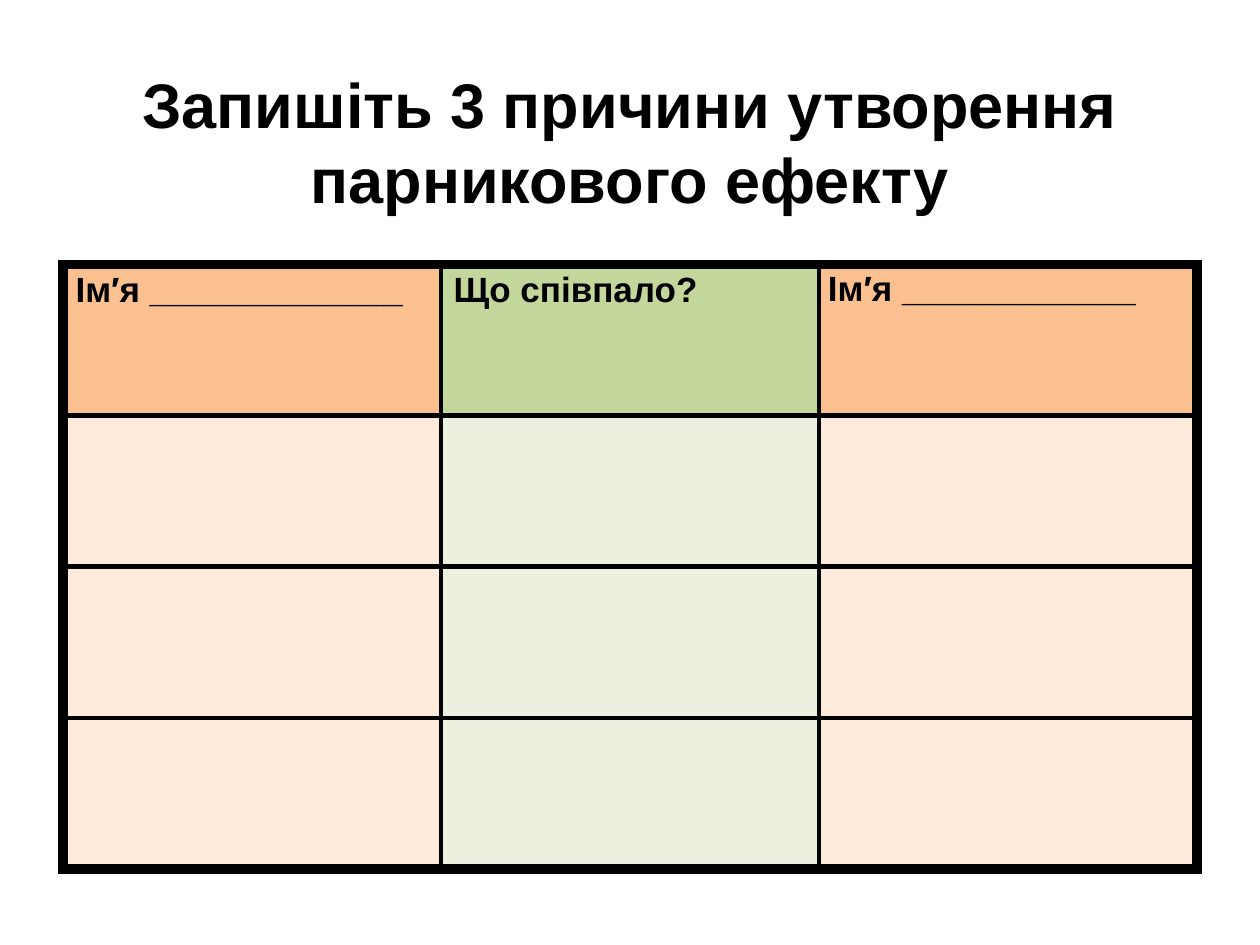
from lxml import etree
from pptx import Presentation
from pptx.dml.color import RGBColor
from pptx.enum.text import MSO_ANCHOR, PP_ALIGN
from pptx.oxml.ns import qn
from pptx.util import Cm, Pt

MIDDLE = MSO_ANCHOR.MIDDLE
CENTER = PP_ALIGN.CENTER

BLACK = "000000"
HEADER_FILLS = ["FAC090", "C3D69B", "FAC090"]
BODY_FILLS = ["FDEADA", "EBF1DE", "FDEADA"]
HEADERS = ["Ім′я _____________", "Що співпало?", "Ім′я ____________"]
ROWS, COLUMNS = 4, 3
INNER_BORDER, OUTER_BORDER = Pt(3), Pt(6)


def color(hex_text):
    return RGBColor.from_string(hex_text)


def style_font(paragraph, size):
    font = paragraph.font
    font.name = "Arial"
    font.size = Pt(size)
    font.bold = True
    font.color.rgb = color(BLACK)


def add_title(slide, text):
    box = slide.shapes.add_textbox(Cm(1.27), Cm(1.25), Cm(22.86), Cm(3.18))
    frame = box.text_frame
    frame.word_wrap = True
    frame.vertical_anchor = MIDDLE
    paragraph = frame.paragraphs[0]
    paragraph.text = text
    paragraph.alignment = CENTER
    style_font(paragraph, 36)


def add_border(cell, side, width):
    """Draw one side (L, R, T or B) of a cell; call before filling the cell."""
    properties = cell._tc.get_or_add_tcPr()
    line = etree.SubElement(properties, qn(f"a:ln{side}"), w=str(width))
    fill = etree.SubElement(line, qn("a:solidFill"))
    etree.SubElement(fill, qn("a:srgbClr"), val=BLACK)


def style_cell(cell, row, column):
    outer_sides = {
        "L": column == 0,
        "R": column == COLUMNS - 1,
        "T": row == 0,
        "B": row == ROWS - 1,
    }
    for side, is_outer in outer_sides.items():
        add_border(cell, side, OUTER_BORDER if is_outer else INNER_BORDER)
    cell.fill.solid()
    fills = HEADER_FILLS if row == 0 else BODY_FILLS
    cell.fill.fore_color.rgb = color(fills[column])


def add_answer_table(slide):
    frame = slide.shapes.add_table(
        ROWS, COLUMNS, Cm(1.27), Cm(5.33), Cm(22.86), Cm(12.19)
    )
    table = frame.table
    for row in range(ROWS):
        for column in range(COLUMNS):
            style_cell(table.cell(row, column), row, column)

    for column, text in enumerate(HEADERS):
        paragraph = table.cell(0, column).text_frame.paragraphs[0]
        paragraph.text = text
        style_font(paragraph, 20)

    last_header = table.cell(0, COLUMNS - 1)
    last_header.margin_left = last_header.margin_right = Cm(0.18)
    last_header.margin_top = last_header.margin_bottom = 0
    paragraph = last_header.text_frame.paragraphs[0]
    paragraph.line_spacing = 1.15
    paragraph.space_after = Pt(10)


def main():
    presentation = Presentation()
    presentation.slide_width = Cm(25.4)
    presentation.slide_height = Cm(19.05)
    slide = presentation.slides.add_slide(presentation.slide_layouts[6])
    add_title(slide, "Запишіть 3 причини утворення парникового ефекту")
    add_answer_table(slide)
    presentation.save("out.pptx")


if __name__ == "__main__":
    main()
